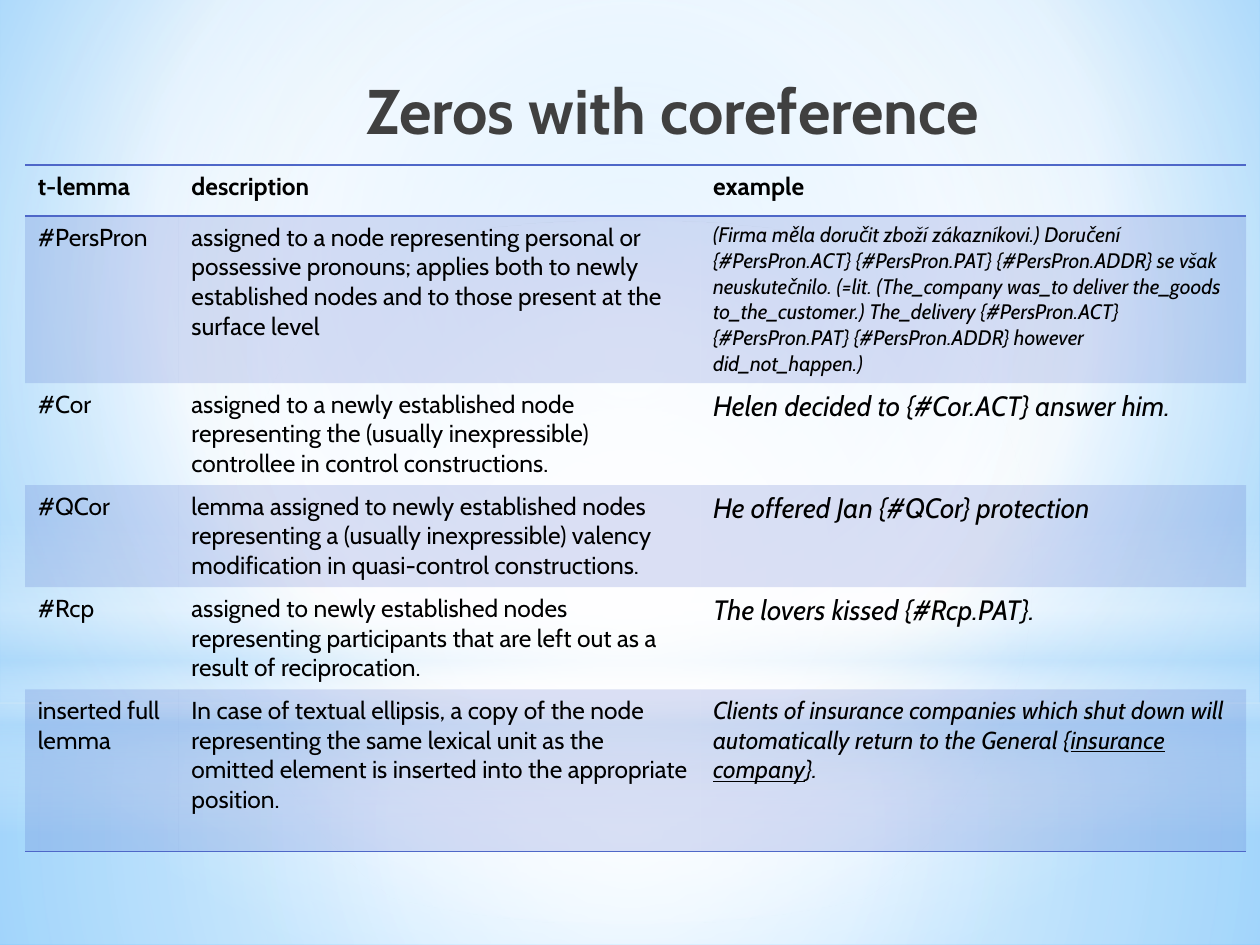
from typing import NamedTuple

from lxml.etree import SubElement
from pptx import Presentation
from pptx.dml.color import RGBColor
from pptx.enum.shapes import MSO_SHAPE as SHAPE
from pptx.enum.text import MSO_ANCHOR as ANCHOR, PP_ALIGN as ALIGN
from pptx.oxml.ns import qn
from pptx.util import Pt

FONT = "Cabin"
ACCENT = "4E67C8"
NO_STYLE = "{2D5ABB26-0587-4C30-8999-92F81FD0307C}"
CENTRE = (50, 50, 50, 50)


class Stop(NamedTuple):
    pos: int
    color: str
    alpha: int = 100


class Glow(NamedTuple):
    kind: SHAPE
    top: float
    height: float
    stops: list[Stop]
    focus: tuple | None = CENTRE


class Entry(NamedTuple):
    lemma: str
    description: str
    example: tuple[str, ...]
    size: int
    height: float


GLOWS = [
    Glow(SHAPE.RECTANGLE, 401.76, 138.24,
         [Stop(0, "FFFFFF", 91), Stop(37, "FFFFFF", 76), Stop(100, "B4DCFA", 79)]),
    Glow(SHAPE.RECTANGLE, 0, 401.76,
         [Stop(0, "FFFFFF", 89), Stop(48, "FFFFFF", 62), Stop(100, "B4DCFA", 79)]),
    Glow(SHAPE.RECTANGLE, 296.64, 180,
         [Stop(0, "FFFFFF", 0), Stop(29, "FFFFFF", 30), Stop(45, "B4DCFA", 40),
          Stop(55, "FFFFFF", 26), Stop(65, "B4DCFA", 60), Stop(100, "FFFFFF", 0)], None),
    Glow(SHAPE.OVAL, 126, 401.76, [Stop(0, "FFFFFF"), Stop(56, "FFFFFF", 0)]),
]

ENTRIES = [
    Entry("t-lemma", "description", ("example",), 14, 29.2),
    Entry("#PersPron",
          "assigned to a node representing personal or possessive pronouns; applies both to "
          "newly established nodes and to those present at the surface level",
          ("(Firma měla doručit zboží zákazníkovi.) Doručení {#PersPron.ACT} {#PersPron.PAT} "
           "{#PersPron.ADDR} se však neuskutečnilo. (=lit. (The_company was_to deliver "
           "the_goods to_the_customer.) The_delivery {#PersPron.ACT} {#PersPron.PAT} "
           "{#PersPron.ADDR} however did_not_happen.)",), 12, 95.4),
    Entry("#Cor",
          "assigned to a newly established node representing the (usually inexpressible) "
          "controllee in control constructions.",
          ("Helen decided to {#Cor.ACT} answer him.",), 16, 58.2),
    Entry("#QCor",
          "lemma assigned to newly established nodes representing a (usually inexpressible) "
          "valency modification in quasi-control constructions.",
          ("He offered Jan {#QCor} protection",), 16, 58.2),
    Entry("#Rcp",
          "assigned to newly established nodes representing participants that are left out "
          "as a result of reciprocation.",
          ("The lovers kissed {#Rcp.PAT}.",), 16, 58.2),
    Entry("inserted full lemma",
          "In case of textual ellipsis, a copy of the node representing the same lexical unit "
          "as the omitted element is inserted into the appropriate position.",
          ("Clients of insurance companies which shut down will automatically return to the "
           "General {", "insurance company", "}."), 14, 92.6),
]


def rgb(color: str) -> RGBColor:
    return RGBColor.from_string(color)


def add_alpha(clr, percent: int) -> None:
    SubElement(clr, qn("a:alpha"), val=str(percent * 1000))


def set_gradient(fill, holder, stops: list[Stop], focus: tuple | None) -> None:
    fill.gradient()
    grad = holder.find(".//" + qn("a:gradFill"))
    for child in list(grad):
        grad.remove(child)
    stop_list = SubElement(grad, qn("a:gsLst"))
    for stop in stops:
        gs = SubElement(stop_list, qn("a:gs"), pos=str(stop.pos * 1000))
        clr = SubElement(gs, qn("a:srgbClr"), val=stop.color)
        if stop.alpha < 100:
            add_alpha(clr, stop.alpha)
    if focus:
        shade = SubElement(grad, qn("a:path"), path="circle")
        sides = {side: str(value * 1000) for side, value in zip("ltrb", focus)}
        SubElement(shade, qn("a:fillToRect"), **sides)
    else:
        SubElement(grad, qn("a:lin"), ang="5400000", scaled="0")


def add_glow(s, glow: Glow) -> None:
    sp = s.shapes.add_shape(glow.kind, Pt(0), Pt(glow.top), Pt(720), Pt(glow.height))
    sp.shadow.inherit = False
    sp.line.fill.background()
    set_gradient(sp.fill, sp.element, glow.stops, glow.focus)


def set_font(p, size: int, color: str, bold: bool = False, italic: bool = False) -> None:
    f = p.font
    f.name, f.size, f.bold, f.italic = FONT, Pt(size), bold, italic
    f.color.rgb = rgb(color)


def add_border(cell, side: str) -> None:
    ln = SubElement(cell._tc.get_or_add_tcPr(), qn(f"a:ln{side}"), w=str(Pt(1)))
    SubElement(SubElement(ln, qn("a:solidFill")), qn("a:srgbClr"), val=ACCENT)


def fill_cell(cell, shaded: bool) -> None:
    if not shaded:
        cell.fill.background()
        return
    cell.fill.solid()
    cell.fill.fore_color.rgb = rgb(ACCENT)
    add_alpha(cell._tc.tcPr.find(".//" + qn("a:solidFill") + "[last()]")[0]
              if cell._tc.tcPr.find(qn("a:solidFill")) is None
              else cell._tc.tcPr.find(qn("a:solidFill"))[0], 20)


def add_entries(s) -> None:
    widths = (87.84, 298.08, 311.76)
    height = sum(e.height for e in ENTRIES)
    frame = s.shapes.add_table(len(ENTRIES), len(widths), Pt(14.4), Pt(94.3),
                               Pt(sum(widths)), Pt(height))
    table = frame.table
    table.horz_banding = table.first_row = False
    table._tbl.tblPr.find(qn("a:tableStyleId")).text = NO_STYLE
    for column, width in zip(table.columns, widths):
        column.width = Pt(width)
    last = len(ENTRIES) - 1
    for i, entry in enumerate(ENTRIES):
        table.rows[i].height = Pt(entry.height)
        for j, parts in enumerate(((entry.lemma,), (entry.description,), entry.example)):
            cell = table.cell(i, j)
            if i == 0:
                add_border(cell, "T")
            if i in (0, last):
                add_border(cell, "B")
            fill_cell(cell, i % 2 == 1)
            p = cell.text_frame.paragraphs[0]
            is_example = j == 2
            set_font(p, entry.size if is_example else 14, "000000",
                     i == 0, is_example and i > 0)
            for k, part in enumerate(parts):
                r = p.add_run()
                r.text = part
                if k == 1:
                    r.font.underline = True


def add_title(s, text: str) -> None:
    tf = s.shapes.add_textbox(Pt(54), Pt(37.44), Pt(512.64), Pt(90)).text_frame
    tf.word_wrap = True
    tf.vertical_anchor = ANCHOR.TOP
    p = tf.paragraphs[0]
    p.text = text
    p.alignment = ALIGN.RIGHT
    set_font(p, 36, "404040", bold=True)


def main() -> None:
    prs = Presentation()
    prs.slide_width, prs.slide_height = Pt(720), Pt(540)
    s = prs.slides.add_slide(prs.slide_layouts[6])
    set_gradient(s.background.fill, s.element,
                 [Stop(0, "9ED5FF"), Stop(60, "FFFFFF"), Stop(100, "5BB9FF")],
                 (20, 10, 20, 60))
    for glow in GLOWS:
        add_glow(s, glow)
    add_entries(s)
    add_title(s, "Zeros with coreference")
    prs.save("out.pptx")


if __name__ == "__main__":
    main()
